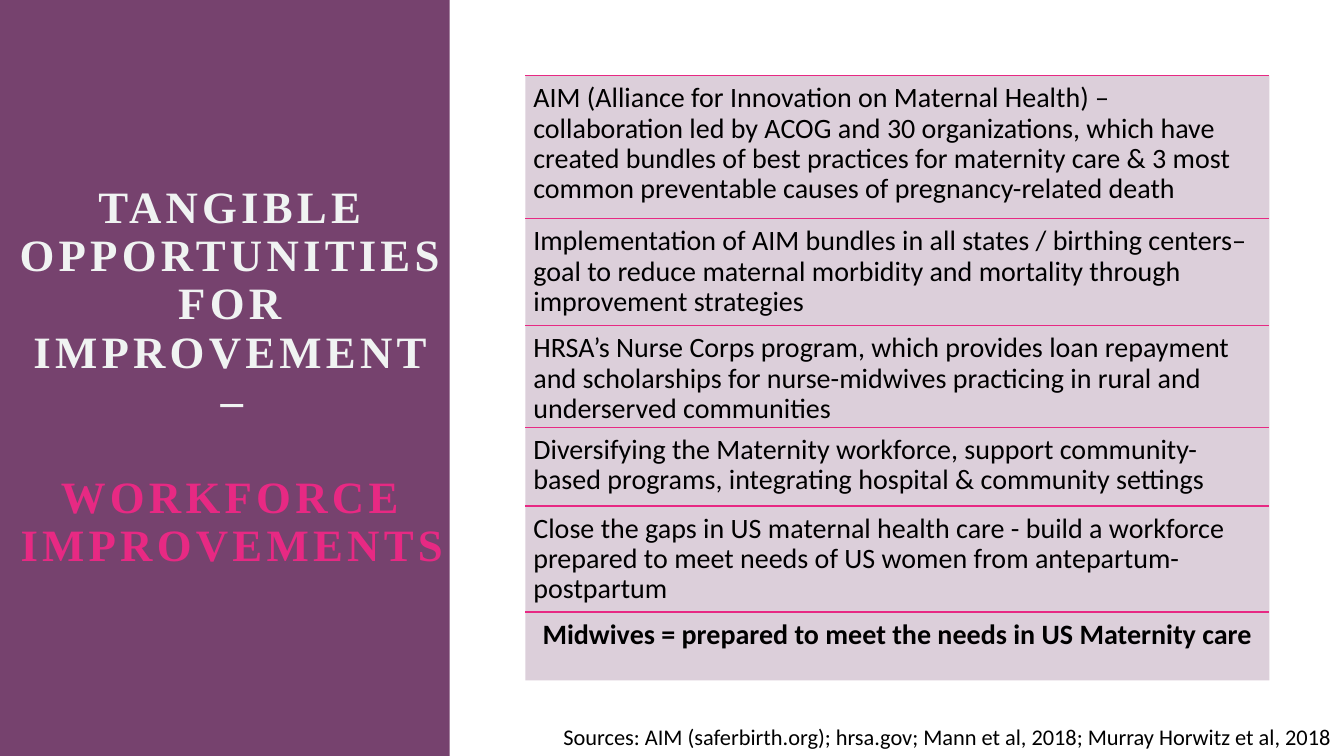
from itertools import pairwise

from lxml.etree import SubElement
from pptx import Presentation
from pptx.dml.color import RGBColor
from pptx.enum.shapes import MSO_CONNECTOR as CONNECTOR, MSO_SHAPE as SHAPE
from pptx.enum.text import MSO_ANCHOR as ANCHOR, PP_ALIGN as ALIGN
from pptx.oxml.ns import qn
from pptx.util import Pt

PX = 9144
COLORS = {"plum": "76426E", "pink": "E72983", "ivory": "F0F3F2", "black": "000000"}
TITLE = [
    ("TANGIBLE\nOPPORTUNITIES\nFOR IMPROVEMENT –", "ivory", 0),
    ("WORKFORCE IMPROVEMENTS", "pink", 34.5),
]
OPPORTUNITIES = [
    "AIM (Alliance for Innovation on Maternal Health) – collaboration led by ACOG and 30 "
    "organizations, which have created bundles of best practices for maternity care & 3 most "
    "common preventable causes of pregnancy-related death",
    "Implementation of AIM bundles in all states / birthing centers– goal to reduce maternal "
    "morbidity and mortality through improvement strategies",
    "HRSA’s Nurse Corps program, which provides loan repayment and scholarships for "
    "nurse-midwives practicing in rural and underserved communities",
    "Diversifying the Maternity workforce, support community-based programs, integrating "
    "hospital & community settings",
    "Close the gaps in US maternal health care - build a workforce prepared to meet needs of "
    "US women from antepartum-postpartum",
    "Midwives = prepared to meet the needs in US Maternity care",
]
SOURCES = "Sources: AIM (saferbirth.org); hrsa.gov; Mann et al, 2018; Murray Horwitz et al, 2018"
LIST_LEFT, LIST_WIDTH = 521, 738
ROW_EDGES = [75, 217, 323, 424, 502, 607, 675]


def rgb(color):
    """Return the named colour."""
    return RGBColor.from_string(COLORS[color])


def emu(*lengths):
    """Turn px lengths into EMU."""
    return [length * PX for length in lengths]


def add_panel(slide, box, color, opacity=100):
    """Add a borderless filled rectangle."""
    panel = slide.shapes.add_shape(SHAPE.RECTANGLE, *emu(*box))
    panel.shadow.inherit = False
    panel.line.fill.background()
    panel.fill.solid()
    panel.fill.fore_color.rgb = rgb(color)
    if opacity < 100:
        tint = panel.fill._xPr.find(qn("a:solidFill"))[0]
        SubElement(tint, qn("a:alpha"), val=str(opacity * 1000))


def add_rule(slide, left, top, width):
    """Add a thin pink horizontal rule."""
    rule = slide.shapes.add_connector(CONNECTOR.STRAIGHT, *emu(left, top, left + width, top))
    rule.line.color.rgb = rgb("pink")
    rule.line.width = Pt(1)
    SubElement(rule._element.spPr, qn("a:effectLst"))


def add_frame(slide, box, inset=(10, 5), anchor=ANCHOR.TOP):
    """Add a wrapping text box and return its text frame."""
    frame = slide.shapes.add_textbox(*emu(*box)).text_frame
    frame.word_wrap = True
    frame.vertical_anchor = anchor
    frame.margin_left, frame.margin_top = emu(*inset)
    frame.margin_right, frame.margin_bottom = emu(*inset)
    return frame


def write(paragraph, text, *, size, font="Calibri", color="black", bold=False,
          align=ALIGN.LEFT, leading=1.0, before=0, tracking=0):
    """Write formatted text into a paragraph."""
    paragraph.alignment = align
    paragraph.line_spacing = leading
    paragraph.space_before = Pt(before)
    for index, line in enumerate(text.split("\n")):
        if index:
            paragraph.add_line_break()
        run = paragraph.add_run()
        run.text = line
        run.font.name = font
        run.font.size = Pt(size)
        run.font.bold = bold
        run.font.color.rgb = rgb(color)
        if tracking:
            run.font._element.set("spc", str(tracking * 100))


def add_title(slide):
    """Add the side panel with its two-part title."""
    add_panel(slide, (0, 0, 446, 750), "plum")
    frame = add_frame(slide, (7, 150, 446, 450), anchor=ANCHOR.MIDDLE)
    for index, (text, color, before) in enumerate(TITLE):
        paragraph = frame.add_paragraph() if index else frame.paragraphs[0]
        write(paragraph, text, size=32, font="Times New Roman", color=color, bold=True,
              align=ALIGN.CENTER, leading=0.9, before=before, tracking=3)


def add_opportunities(slide):
    """Add the ruled list of opportunities."""
    top, bottom = ROW_EDGES[0], ROW_EDGES[-1]
    add_panel(slide, (LIST_LEFT, top, LIST_WIDTH, bottom - top), "plum", opacity=25)
    for text, (top, bottom) in zip(OPPORTUNITIES, pairwise(ROW_EDGES)):
        closing = text == OPPORTUNITIES[-1]
        add_rule(slide, LIST_LEFT, top, LIST_WIDTH)
        frame = add_frame(slide, (LIST_LEFT, top, LIST_WIDTH, bottom - top), inset=(8, 8))
        write(frame.paragraphs[0], text, size=20, bold=closing, leading=0.9,
              align=ALIGN.CENTER if closing else ALIGN.LEFT)


def main():
    """Build and save the slide."""
    deck = Presentation()
    deck.slide_width, deck.slide_height = emu(1333, 750)
    slide = deck.slides.add_slide(deck.slide_layouts[6])
    add_title(slide)
    add_opportunities(slide)
    sources = add_frame(slide, (549, 713, 797, 37))
    write(sources.paragraphs[0], SOURCES, size=16)
    deck.save("out.pptx")


if __name__ == "__main__":
    main()
